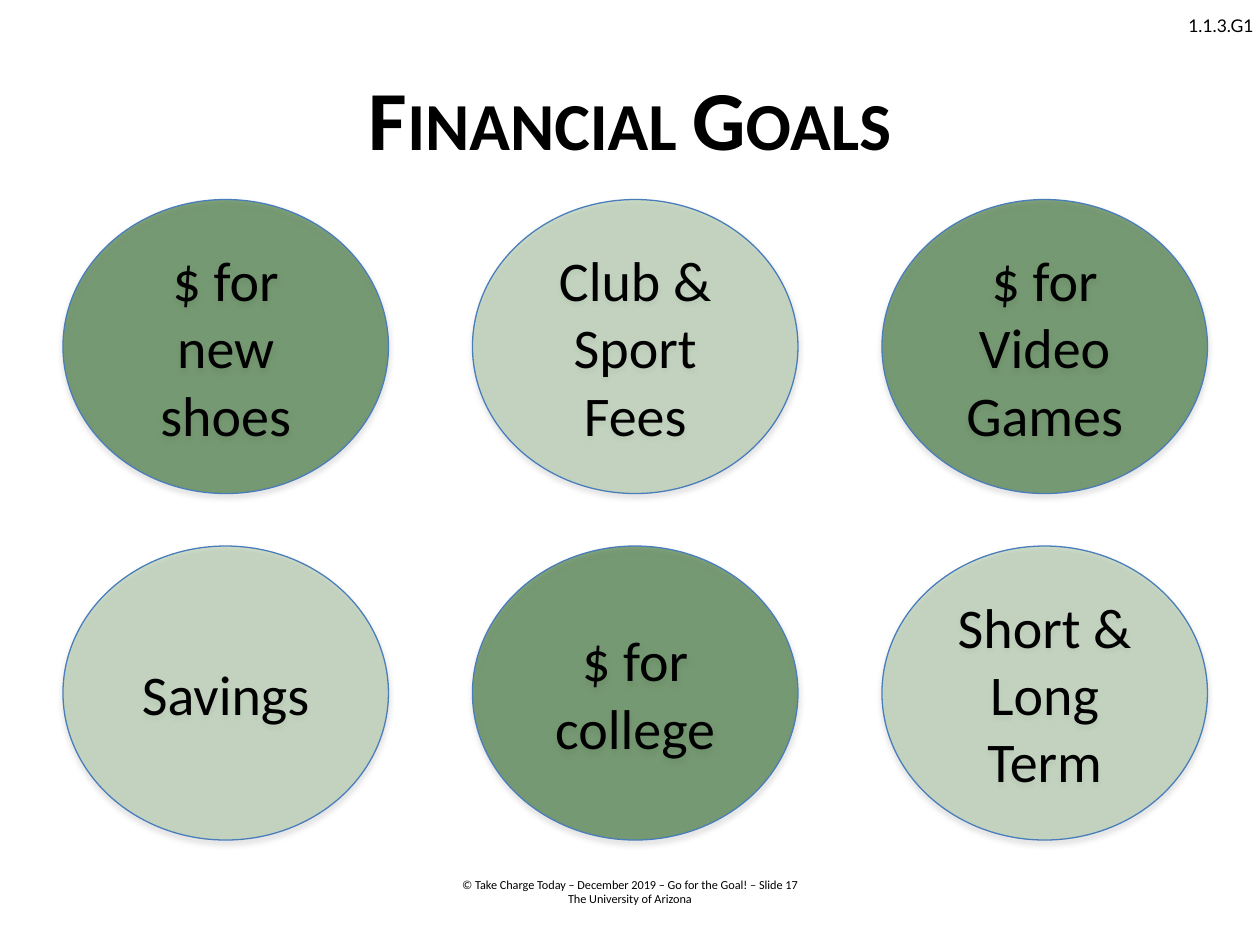
import pptx
import pptx.dml.color
import pptx.enum.shapes
import pptx.enum.text
import pptx.oxml
import pptx.oxml.ns
import pptx.util
from dataclasses import dataclass

Pt = pptx.util.Pt
ALIGN = pptx.enum.text.PP_ALIGN
MIDDLE = pptx.enum.text.MSO_ANCHOR.MIDDLE


@dataclass(frozen=True)
class Theme:
    font: str = "Calibri"
    code_font: str = "Lato"
    text: str = "000000"
    dark: str = "165710"
    light: str = "A4C29E"
    line: str = "4A7EBB"
    shadow: str = "808080"
    fill_alpha: int = 54
    shadow_alpha: int = 35
    title_size: int = 48
    goal_size: int = 32
    code_size: int = 10
    footer_size: int = 7


def rgb(value):
    return pptx.dml.color.RGBColor.from_string(value)


def drawing_element(xml):
    return pptx.oxml.parse_xml(xml.replace(">", f" {pptx.oxml.ns.nsdecls('a')}>", 1))


class GoalSlide:
    def __init__(self, prs, theme):
        self.theme = theme
        self.s = prs.slides.add_slide(prs.slide_layouts[5])

    def set_text(self, tf, lines, size, align=ALIGN.CENTER, font=None, bold=False):
        tf.word_wrap = True
        for i, line in enumerate(lines):
            p = tf.paragraphs[0] if i == 0 else tf.add_paragraph()
            p.text = line
            p.alignment = align
            p.font.name = font or self.theme.font
            p.font.size = Pt(size)
            p.font.bold = bold
            p.font.color.rgb = rgb(self.theme.text)

    def title(self, text, x, y, w, h):
        sp = self.s.shapes.title
        sp.left, sp.top, sp.width, sp.height = Pt(x), Pt(y), Pt(w), Pt(h)
        tf = sp.text_frame
        tf.vertical_anchor = MIDDLE
        self.set_text(tf, [text], self.theme.title_size, bold=True)
        r = tf.paragraphs[0].runs[0]
        r._r.get_or_add_rPr().set("cap", "small")

    def label(self, lines, x, y, w, h, size, **style):
        sp = self.s.shapes.add_textbox(Pt(x), Pt(y), Pt(w), Pt(h))
        self.set_text(sp.text_frame, lines, size, **style)

    def goal(self, text, x, y, w, h, color):
        t = self.theme
        sp = self.s.shapes.add_shape(
            pptx.enum.shapes.MSO_SHAPE.OVAL, Pt(x), Pt(y), Pt(w), Pt(h))
        sp.fill.solid()
        sp.fill.fore_color.rgb = rgb(color)
        sp.line.color.rgb = rgb(t.line)
        sp.line.width = Pt(0.75)
        sp.shadow.inherit = False
        # Translucent fill and soft shadow below
        spPr = sp._element.spPr
        clr = spPr.find(pptx.oxml.ns.qn("a:solidFill"))[0]
        clr.append(drawing_element(f'<a:alpha val="{t.fill_alpha * 1000}"></a:alpha>'))
        spPr.find(pptx.oxml.ns.qn("a:effectLst")).append(drawing_element(
            f'<a:outerShdw blurRad="{Pt(3.1)}" dist="{Pt(1.8)}" dir="5400000" rotWithShape="0">'
            f'<a:srgbClr val="{t.shadow}"><a:alpha val="{t.shadow_alpha * 1000}"/></a:srgbClr>'
            '</a:outerShdw>'))
        sp.text_frame.vertical_anchor = MIDDLE
        self.set_text(sp.text_frame, [text], t.goal_size)


def main():
    theme = Theme()
    prs = pptx.Presentation()
    prs.slide_width, prs.slide_height = Pt(720), Pt(540)
    slide = GoalSlide(prs, theme)

    # Lesson code, footer and title
    slide.label(["1.1.3.G1"], 672, 5, 60, 19.5, theme.code_size,
                align=ALIGN.LEFT, font=theme.code_font)
    slide.label(["© Take Charge Today – December 2019 – Go for the Goal! – Slide 17",
                 "The University of Arizona"], 90, 497.5, 540, 24.5, theme.footer_size)
    slide.title("Financial Goals", 36, 21.6, 648, 90)

    # Goals in a 3 by 2 grid, dark and light alternating
    goals = ["$ for new shoes", "Club & Sport Fees", "$ for Video Games",
             "Savings", "$ for college", "Short & Long Term"]
    for i, text in enumerate(goals):
        row, col = divmod(i, 3)
        slide.goal(text, 36 + 234 * col, 114 + 198 * row, 186, 168,
                   theme.light if i % 2 else theme.dark)

    prs.save("out.pptx")


if __name__ == "__main__":
    main()
